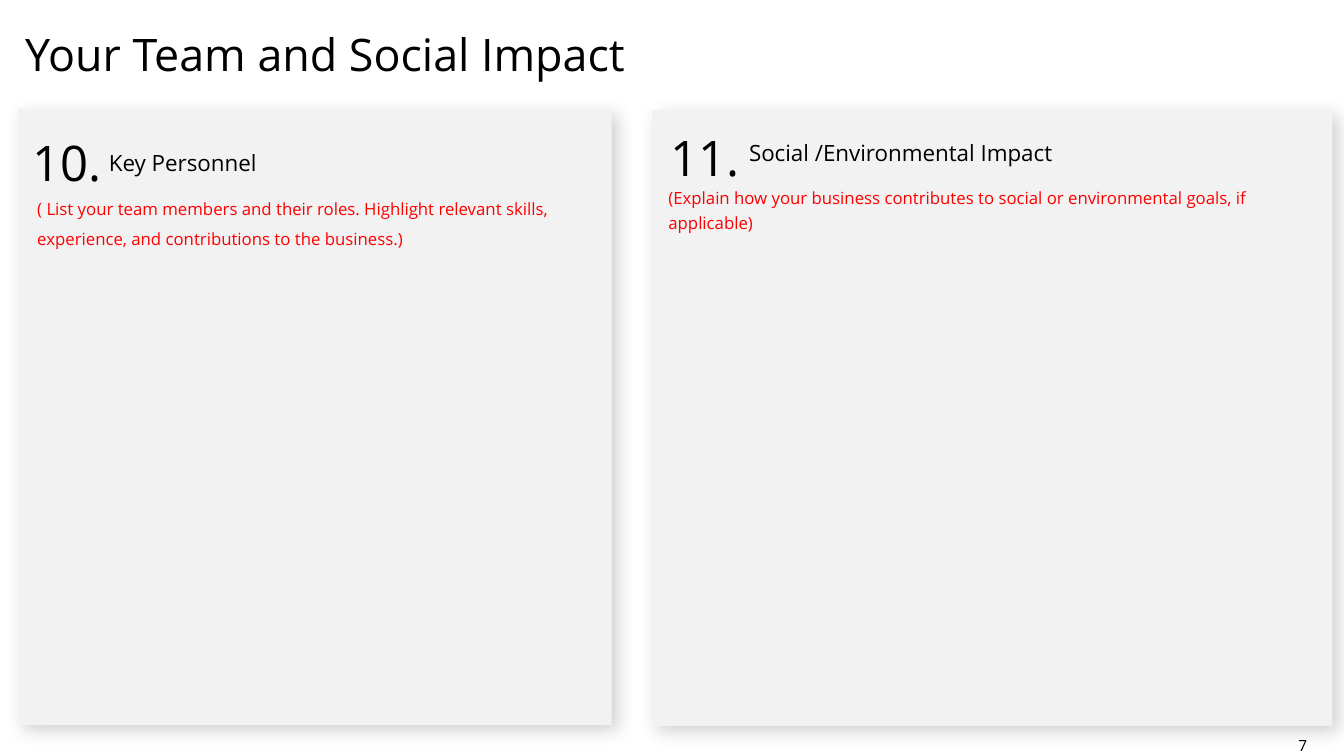
"""Build the team and social impact slide with two numbered panels."""
from lxml import etree
from pptx import Presentation
from pptx.dml.color import RGBColor
from pptx.enum import shapes, text
from pptx.oxml import ns
from pptx.util import Pt

COLORS = {"panel": "F2F2F2", "text": "000000", "prompt": "FF0000"}
FONT = "Open Sans"


def write(shape, words, size, color="text", spacing=1.0, wrap=True, align=text.PP_ALIGN.LEFT):
    """Fill a shape with one formatted paragraph without insets."""
    frame = shape.text_frame
    frame_format = {
        "margin_left": 0, "margin_top": 0, "margin_right": 0, "margin_bottom": 0,
        "word_wrap": wrap, "vertical_anchor": text.MSO_ANCHOR.TOP,
        "auto_size": text.MSO_AUTO_SIZE.NONE,
    }
    for name, value in frame_format.items():
        setattr(frame, name, value)
    paragraph = frame.paragraphs[0]
    paragraph.alignment = align
    paragraph.line_spacing = spacing
    run = paragraph.add_run()
    run.text = words
    for name, value in {"name": FONT, "size": Pt(size), "bold": False}.items():
        setattr(run.font, name, value)
    run.font.color.rgb = RGBColor.from_string(COLORS[color])


def add_shadow(shape):
    """Give a shape a soft shadow towards the lower right."""
    effects = shape.shadow._element.find(ns.qn("a:effectLst"))
    shadow = etree.SubElement(effects, ns.qn("a:outerShdw"), blurRad=str(Pt(13)),
                              dist=str(Pt(6)), dir="2700000", algn="tl", rotWithShape="0")
    color = etree.SubElement(shadow, ns.qn("a:srgbClr"), val=COLORS["text"])
    etree.SubElement(color, ns.qn("a:alpha"), val="18000")


presentation = Presentation()
presentation.slide_width, presentation.slide_height = Pt(960), Pt(540)
slide = presentation.slides.add_slide(presentation.slide_layouts[5])

title = slide.shapes.title
title.left, title.top, title.width, title.height = Pt(18), Pt(19.4), Pt(893), Pt(39)
write(title, "Your Team and Social Impact", 32)

panels = [
    {
        "box": (13, 77.8, 424, 440),
        "texts": [
            ((23, 95, 50.4, 42.5), "10.", 35, "text", 1.0, False),
            ((77.8, 106.6, 110, 19.4), "Key Personnel", 16, "text", 1.0, False),
            ((26.6, 134.6, 384, 85), "( List your team members and their roles. Highlight relevant skills, "
             "experience, and contributions to the business.)", 12, "prompt", 1.5, True),
        ],
    },
    {
        "box": (465.8, 78.5, 486, 440),
        "texts": [
            ((478.8, 91.4, 57, 42.5), "11.", 35, "text", 1.0, False),
            ((535, 99.4, 255.6, 19.4), "Social /Environmental Impact", 16, "text", 1.0, False),
            ((477.4, 130.3, 433.4, 35.3), "(Explain how your business contributes to social or "
             "environmental goals, if applicable)", 12, "prompt", 1.25, True),
        ],
    },
]
for panel in panels:
    card = slide.shapes.add_shape(shapes.MSO_SHAPE.RECTANGLE, *map(Pt, panel["box"]))
    card.fill.solid()
    card.fill.fore_color.rgb = RGBColor.from_string(COLORS["panel"])
    card.line.fill.background()
    card.shadow.inherit = False
    add_shadow(card)
    for box, *content in panel["texts"]:
        write(slide.shapes.add_textbox(*map(Pt, box)), *content)

page_number = slide.shapes.add_textbox(Pt(900.7), Pt(525.6), Pt(59.8), Pt(13.7))
write(page_number, "7", 11, align=text.PP_ALIGN.CENTER)

presentation.save("out.pptx")
